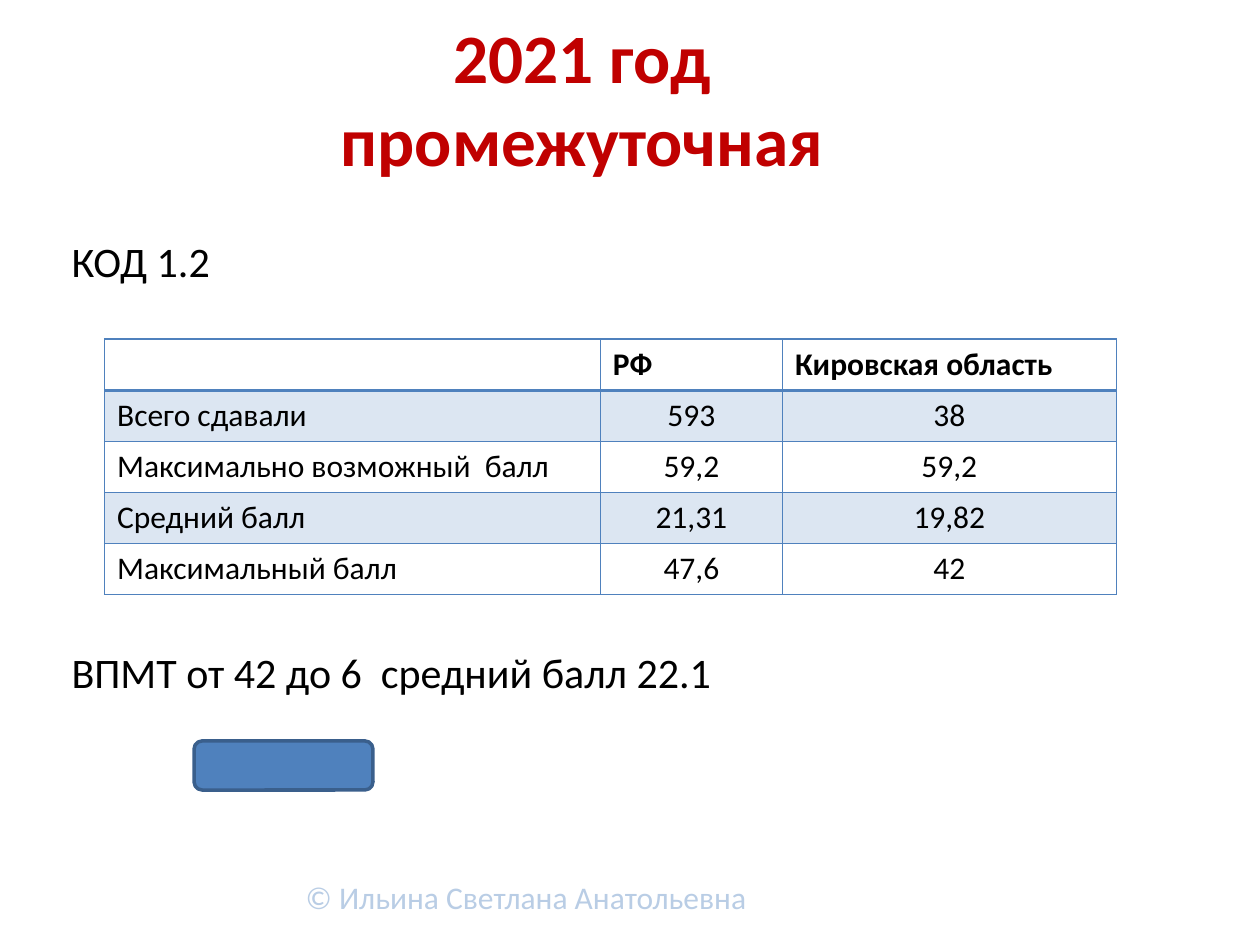
from dataclasses import dataclass

import lxml.etree
import pptx
import pptx.dml.color
import pptx.enum.shapes
import pptx.enum.text
import pptx.oxml.ns
import pptx.util

RGBColor = pptx.dml.color.RGBColor
ALIGN = pptx.enum.text.PP_ALIGN

RED = RGBColor(0xC0, 0x00, 0x00)
BLACK = RGBColor(0x00, 0x00, 0x00)
BLUE = RGBColor(0x4F, 0x81, 0xBD)
DARK_BLUE = RGBColor(0x3A, 0x5F, 0x8C)
BAND_BLUE = RGBColor(0xDC, 0xE6, 0xF2)
FOOTER_BLUE = RGBColor(0xB9, 0xCD, 0xE5)

SLIDE_WIDTH = pptx.util.Inches(10)
SLIDE_HEIGHT = pptx.util.Inches(7.5)
COLUMN_SHARES = (0.49, 0.18, 0.33)


@dataclass(frozen=True)
class Area:
    """A rectangle in percent of the slide's width and height."""
    left: float
    top: float
    width: float
    height: float

    def lengths(self) -> tuple[int, int, int, int]:
        return (int(SLIDE_WIDTH * self.left / 100), int(SLIDE_HEIGHT * self.top / 100),
                int(SLIDE_WIDTH * self.width / 100), int(SLIDE_HEIGHT * self.height / 100))


@dataclass(frozen=True)
class TextStyle:
    size: float
    color: RGBColor
    bold: bool = False
    alignment: ALIGN = ALIGN.LEFT


@dataclass(frozen=True)
class Label:
    area: Area
    text: str
    style: TextStyle


TITLE_STYLE = TextStyle(39.6, RED, True, ALIGN.CENTER)
BODY_STYLE = TextStyle(24, BLACK)
HEADER_STYLE = TextStyle(18, BLACK, True)
NAME_STYLE = TextStyle(18, BLACK)
VALUE_STYLE = TextStyle(18, BLACK, alignment=ALIGN.CENTER)
FOOTER_STYLE = TextStyle(18, FOOTER_BLUE, alignment=ALIGN.CENTER)

TITLE_AREA = Area(16.4, 4, 59.6, 12.67)
TABLE_AREA = Area(8.3, 35.87, 80.3, 27.07)
BUTTON_AREA = Area(15.4, 78.4, 14.2, 5.2)

LABELS = (
    Label(Area(19.5, 91.73, 44.5, 6.27), "© Ильина Светлана Анатольевна", FOOTER_STYLE),
    Label(Area(4.7, 24.27, 90, 6.67), "КОД 1.2", BODY_STYLE),
    Label(Area(4.7, 67.73, 90, 6.67), "ВПМТ от 42 до 6  средний балл 22.1", BODY_STYLE),
)

RESULTS = (
    ("", "РФ", "Кировская область"),
    ("Всего сдавали", "593", "38"),
    ("Максимально возможный  балл", "59,2", "59,2"),
    ("Средний балл", "21,31", "19,82"),
    ("Максимальный балл", "47,6", "42"),
)


def write_text(text_frame: pptx.text.text.TextFrame, text: str, style: TextStyle) -> None:
    text_frame.text = text
    paragraph = text_frame.paragraphs[0]
    paragraph.alignment = style.alignment
    paragraph.font.name = "Calibri"
    paragraph.font.size = pptx.util.Pt(style.size)
    paragraph.font.bold = style.bold
    paragraph.font.color.rgb = style.color


def place_text(shape, area: Area, text: str, style: TextStyle) -> None:
    shape.left, shape.top, shape.width, shape.height = area.lengths()
    write_text(shape.text_frame, text, style)
    shape.text_frame.word_wrap = True
    shape.text_frame.auto_size = pptx.enum.text.MSO_AUTO_SIZE.NONE
    shape.text_frame.vertical_anchor = pptx.enum.text.MSO_ANCHOR.MIDDLE


def add_border(cell, side: str, points: float) -> None:
    qualified = pptx.oxml.ns.qn
    properties = cell._tc.get_or_add_tcPr()
    line = lxml.etree.SubElement(properties, qualified(f"a:ln{side}"),
                                 w=str(int(pptx.util.Pt(points))))
    fill = lxml.etree.SubElement(line, qualified("a:solidFill"))
    lxml.etree.SubElement(fill, qualified("a:srgbClr"), val=str(BLUE))


def fill_cell(cell, text: str, row: int, column: int) -> None:
    # Borders come before the fill in the cell properties
    thick_side = {0: "B", 1: "T"}.get(row)
    for side in "LRTB":
        add_border(cell, side, 2 if side == thick_side else 1)
    if row % 2:
        cell.fill.solid()
        cell.fill.fore_color.rgb = BAND_BLUE
    else:
        cell.fill.background()
    style = HEADER_STYLE if row == 0 else VALUE_STYLE if column else NAME_STYLE
    write_text(cell.text_frame, text, style)


def add_results_table(slide: pptx.slide.Slide) -> None:
    left, top, width, height = TABLE_AREA.lengths()
    table = slide.shapes.add_table(len(RESULTS), len(COLUMN_SHARES),
                                   left, top, width, height).table
    table.first_row = False
    table.horz_banding = False
    for column, share in zip(table.columns, COLUMN_SHARES):
        column.width = int(width * share)
    for row, texts in enumerate(RESULTS):
        for column, text in enumerate(texts):
            fill_cell(table.cell(row, column), text, row, column)


def add_button(slide: pptx.slide.Slide) -> None:
    button = slide.shapes.add_shape(pptx.enum.shapes.MSO_SHAPE.ROUNDED_RECTANGLE,
                                    *BUTTON_AREA.lengths())
    button.shadow.inherit = False
    button.fill.solid()
    button.fill.fore_color.rgb = BLUE
    button.line.color.rgb = DARK_BLUE
    button.line.width = pptx.util.Pt(2)


def main() -> None:
    presentation = pptx.Presentation()
    presentation.slide_width = SLIDE_WIDTH
    presentation.slide_height = SLIDE_HEIGHT
    slide = presentation.slides.add_slide(presentation.slide_layouts.get_by_name("Title Only"))

    # Title, body lines and footer
    place_text(slide.shapes.title, TITLE_AREA, "2021 год промежуточная", TITLE_STYLE)
    for label in LABELS:
        box = slide.shapes.add_textbox(*label.area.lengths())
        place_text(box, label.area, label.text, label.style)

    # Button and results
    add_button(slide)
    add_results_table(slide)

    presentation.save("out.pptx")


if __name__ == "__main__":
    main()
